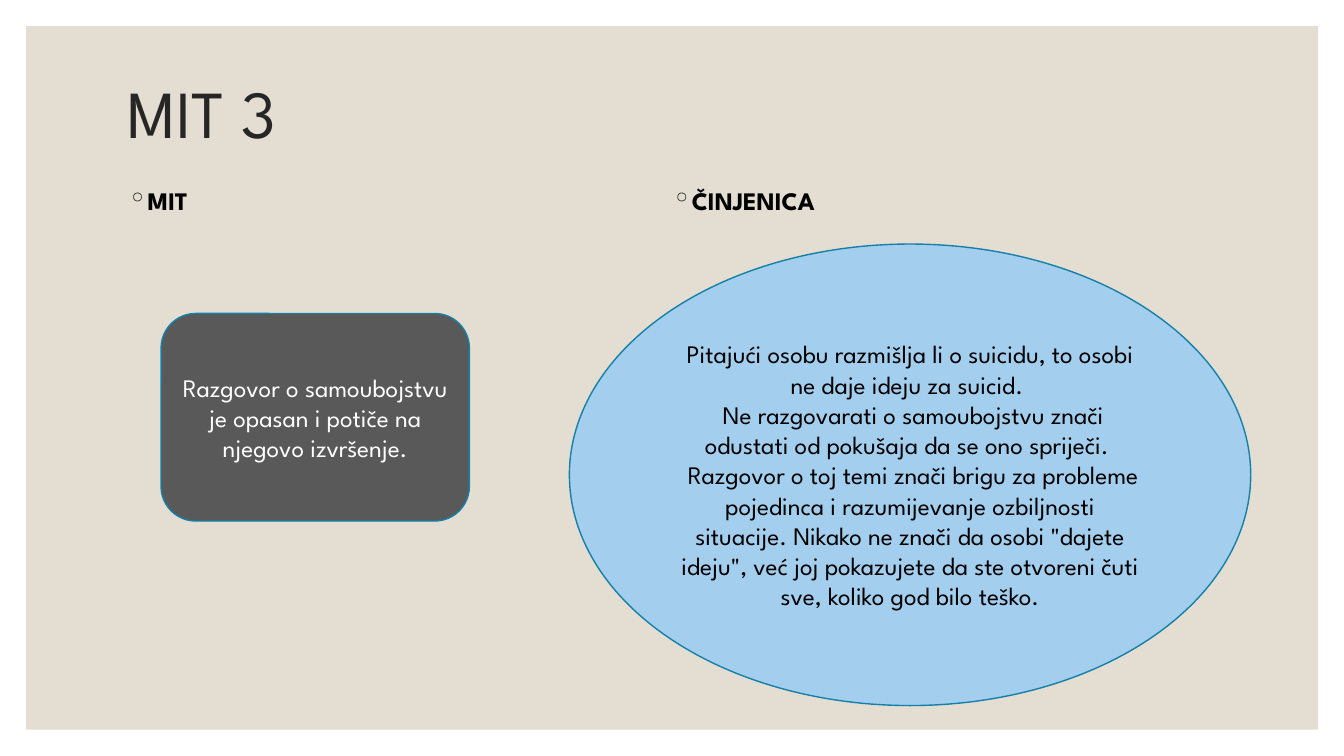
from dataclasses import dataclass

from lxml.etree import SubElement
from pptx import Presentation
from pptx.dml.color import RGBColor as RGB
from pptx.enum.shapes import MSO_SHAPE as SHAPE
from pptx.enum.text import MSO_ANCHOR as ANCHOR, PP_ALIGN as ALIGN
from pptx.oxml.ns import qn
from pptx.util import Cm, Pt


@dataclass(frozen=True)
class Theme:
    font: str = "League Spartan"
    panel: str = "E3DED1"
    ink: str = "262626"
    black: str = "000000"
    white: str = "FFFFFF"
    myth: str = "595959"
    fact: str = "A3CEED"
    outline: str = "1580A9"
    title_size: int = 48
    body_size: int = 18


THEME = Theme()
MARGIN = 0.66
LEFT = 2.97
COLUMN_STEP = 13.71

MYTH = ["Razgovor o samoubojstvu je opasan i potiče na njegovo izvršenje."]
FACT = [
    "Pitajući osobu razmišlja li o suicidu, to osobi ne daje ideju za suicid. ",
    " Ne razgovarati o samoubojstvu znači odustati od pokušaja da se ono spriječi. ",
    " Razgovor o toj temi znači brigu za probleme pojedinca i razumijevanje "
    "ozbiljnosti situacije. Nikako ne znači da osobi \"dajete ideju\", već joj "
    "pokazujete da ste otvoreni čuti sve, koliko god bilo teško.",
]


def add_text(p, text, *, color, size=THEME.body_size, bold=False, align=ALIGN.LEFT):
    p.alignment = align
    r = p.add_run()
    r.text = text
    r.font.name = THEME.font
    r.font.size = Pt(size)
    r.font.bold = bold
    r.font.color.rgb = RGB.from_string(color)


def add_bullet(p, char, color):
    """Give the paragraph a hanging bullet in its own colour."""
    pPr = p._p.get_or_add_pPr()
    pPr.set("marL", str(Cm(0.5)))
    pPr.set("indent", str(-Cm(0.5)))
    SubElement(SubElement(pPr, qn("a:buClr")), qn("a:srgbClr"), val=color)
    SubElement(pPr, qn("a:buChar"), char=char)


def add_box(s, box, anchor=ANCHOR.TOP):
    """Add a wrapping text box and return its text frame."""
    tf = s.shapes.add_textbox(*map(Cm, box)).text_frame
    tf.word_wrap = True
    tf.vertical_anchor = anchor
    return tf


def add_title(s, text):
    p = add_box(s, (LEFT, 1.78, 27.94, 2.31), ANCHOR.MIDDLE).paragraphs[0]
    p.line_spacing = 0.9
    add_text(p, text, color=THEME.ink, size=THEME.title_size)


def add_heading(s, text, left):
    p = add_box(s, (left, 4.55, 12.7, 1.2)).paragraphs[0]
    add_bullet(p, "◦", THEME.ink)
    add_text(p, text, color=THEME.black, bold=True)


def add_figure(s, kind, box, fill, line=None, paragraphs=(), color=THEME.black):
    sp = s.shapes.add_shape(kind, *map(Cm, box))
    sp.shadow.inherit = False
    sp.fill.solid()
    sp.fill.fore_color.rgb = RGB.from_string(fill)
    if line:
        sp.line.color.rgb = RGB.from_string(line)
        sp.line.width = Pt(1)
    else:
        sp.line.fill.background()
    tf = sp.text_frame
    tf.word_wrap = True
    tf.vertical_anchor = ANCHOR.MIDDLE
    for i, text in enumerate(paragraphs):
        p = tf.add_paragraph() if i else tf.paragraphs[0]
        add_text(p, text, color=color, align=ALIGN.CENTER)


def main():
    prs = Presentation()
    prs.slide_width, prs.slide_height = Cm(33.87), Cm(19.05)
    s = prs.slides.add_slide(prs.slide_layouts[6])

    add_figure(s, SHAPE.RECTANGLE, (MARGIN, MARGIN, 32.56, 17.73), THEME.panel)
    add_title(s, "MIT 3")
    for i, heading in enumerate(["MIT", "ČINJENICA"]):
        add_heading(s, heading, LEFT + i * COLUMN_STEP)
    add_figure(s, SHAPE.ROUNDED_RECTANGLE, (4.06, 7.9, 7.77, 5.23),
               THEME.myth, THEME.outline, MYTH, THEME.white)
    add_figure(s, SHAPE.OVAL, (14.35, 6.15, 17.17, 11.63),
               THEME.fact, THEME.outline, FACT)

    prs.save("out.pptx")


if __name__ == "__main__":
    main()
